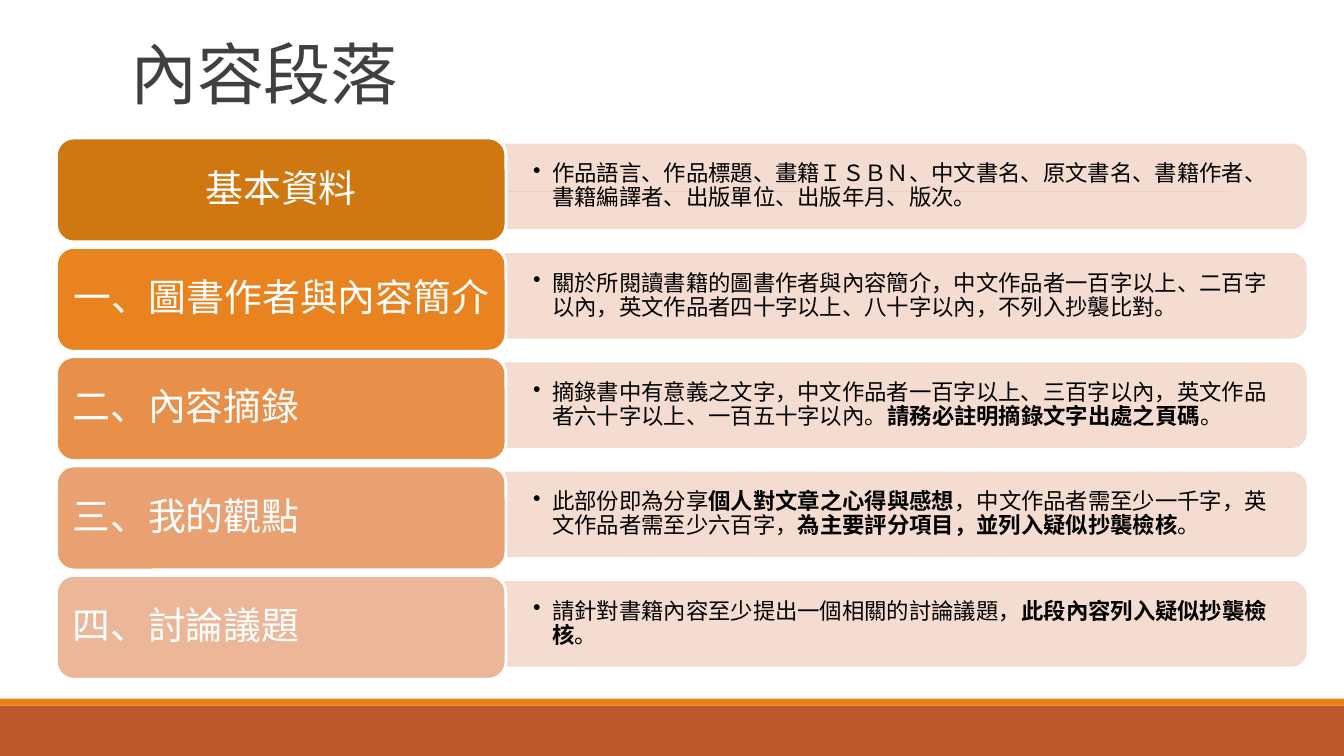
from pptx import Presentation
from pptx.dml.color import RGBColor
from pptx.enum import shapes, text
from pptx.oxml import xmlchemy
from pptx.oxml.ns import qn
from pptx.util import Pt
from lxml import etree

FONT = "Noto Sans CJK SC"
COLORS = {
    "orange": "E48312", "rust": "BD582C", "rule": "808080", "title": "404040",
    "panel": "F5D9CC", "white": "FFFFFF", "black": "000000",
}
LEFT, CENTER = text.PP_ALIGN.LEFT, text.PP_ALIGN.CENTER

# label, alignment, label fill, detail as alternating plain and bold pieces
SECTIONS = [
    ("基本資料", CENTER, "CF7710",
     ["作品語言、作品標題、畫籍ＩＳＢＮ、中文書名、原文書名、書籍作者、書籍編譯者、出版單位、出版年月、版次。"]),
    ("一、圖書作者與內容簡介", CENTER, "E88320",
     ["關於所閱讀書籍的圖書作者與內容簡介，中文作品者一百字以上、二百字以內，英文作品者四十字以上、八十字以內，不列入抄襲比對。"]),
    ("二、內容摘錄", LEFT, "E8904A",
     ["摘錄書中有意義之文字，中文作品者一百字以上、三百字以內，英文作品者六十字以上、一百五十字以內。",
      "請務必註明摘錄文字出處之頁碼", "。"]),
    ("三、我的觀點", LEFT, "E9A172",
     ["此部份即為分享", "個人對文章之心得與感想", "，中文作品者需至少一千字，英文作品者需至少六百字，",
      "為主要評分項目，並列入疑似抄襲檢核", "。"]),
    ("四、討論議題", LEFT, "ECB698",
     ["請針對書籍內容至少提出一個相關的討論議題，", "此段內容列入疑似抄襲檢核", "。"]),
]

deck = Presentation()
deck.slide_width, deck.slide_height = Pt(960), Pt(540)
slide = deck.slides.add_slide(deck.slide_layouts[6])


def add_block(kind, left, top, width, height, fill, line=None, line_width=0):
    block = slide.shapes.add_shape(kind, Pt(left), Pt(top), Pt(width), Pt(height))
    block.shadow.inherit = False
    block.fill.solid()
    block.fill.fore_color.rgb = RGBColor.from_string(fill)
    if line:
        block.line.color.rgb = RGBColor.from_string(line)
        block.line.width = Pt(line_width)
    else:
        block.line.fill.background()
    return block


def write(holder, pieces, size, color, margins, spacing, align=LEFT, anchor=text.MSO_ANCHOR.MIDDLE):
    frame = holder.text_frame
    frame.word_wrap = True
    frame.vertical_anchor = anchor
    frame.margin_left = frame.margin_right = Pt(margins[0])
    frame.margin_top = frame.margin_bottom = Pt(margins[1])
    paragraph = frame.paragraphs[0]
    paragraph.alignment = align
    paragraph.line_spacing = spacing
    paragraph.font.size = Pt(size)
    paragraph.font.name = FONT
    paragraph.font.color.rgb = RGBColor.from_string(color)
    defaults = paragraph._p.pPr.find(qn("a:defRPr"))
    etree.SubElement(defaults, qn("a:ea"), typeface=FONT)
    for number, piece in enumerate(pieces):
        run = paragraph.add_run()
        run.text = piece
        if number % 2:
            run.font.bold = True
    return paragraph


# Footer bands
add_block(shapes.MSO_SHAPE.RECTANGLE, 0, 504, 960, 36, COLORS["rust"])
add_block(shapes.MSO_SHAPE.RECTANGLE, 0, 499, 960, 5, COLORS["orange"])

# Rule and title
rule = slide.shapes.add_connector(shapes.MSO_CONNECTOR.STRAIGHT, Pt(94.3), Pt(136.8), Pt(878.4), Pt(136.8))
rule.line.color.rgb = RGBColor.from_string(COLORS["rule"])
rule.line.width = Pt(0.5)
etree.SubElement(rule._element.spPr, qn("a:effectLst"))

title = slide.shapes.add_textbox(Pt(86.4), Pt(22.3), Pt(792), Pt(62))
heading = write(title, ["內容段落"], 48, COLORS["title"], (7.2, 3.6), 0.85, anchor=text.MSO_ANCHOR.BOTTOM)
heading.runs[0]._r.get_or_add_rPr().set("spc", "-50")

# Section rows: panel, detail and label
ROW_TOP, ROW_PITCH = 98.6, 78.1
PANEL_DEPTH, PANEL_LENGTH, PANEL_CENTER = 59.8, 571.7, 646.9
for row, (label, align, fill, detail) in enumerate(SECTIONS):
    top = ROW_TOP + row * ROW_PITCH
    middle = top + 34.6

    panel = add_block(shapes.MSO_SHAPE.ROUND_2_SAME_RECTANGLE, PANEL_CENTER - PANEL_DEPTH / 2,
                      middle - PANEL_LENGTH / 2, PANEL_DEPTH, PANEL_LENGTH,
                      COLORS["panel"], COLORS["panel"], 1.25)
    panel.rotation = 90
    for tint in panel._element.spPr.iter(qn("a:srgbClr")):
        etree.SubElement(tint, qn("a:alpha"), val="90000")

    detail_box = slide.shapes.add_textbox(Pt(361.4), Pt(middle - 27), Pt(568.8), Pt(54))
    item = write(detail_box, detail, 16, COLORS["black"], (19.4, 10), 0.9)
    properties = item._p.pPr
    properties.set("marL", str(Pt(13.7)))
    properties.set("indent", str(-Pt(13.7)))
    bullet = etree.Element(qn("a:buChar"), char="•")
    properties.find(qn("a:defRPr")).addprevious(bullet)

    label_box = add_block(shapes.MSO_SHAPE.ROUNDED_RECTANGLE, 40.3, top, 321.1, 74.2,
                          fill, COLORS["white"], 2)
    write(label_box, [label], 27, COLORS["white"], (7.9, 4.3), 0.9, align)

deck.save("out.pptx")
